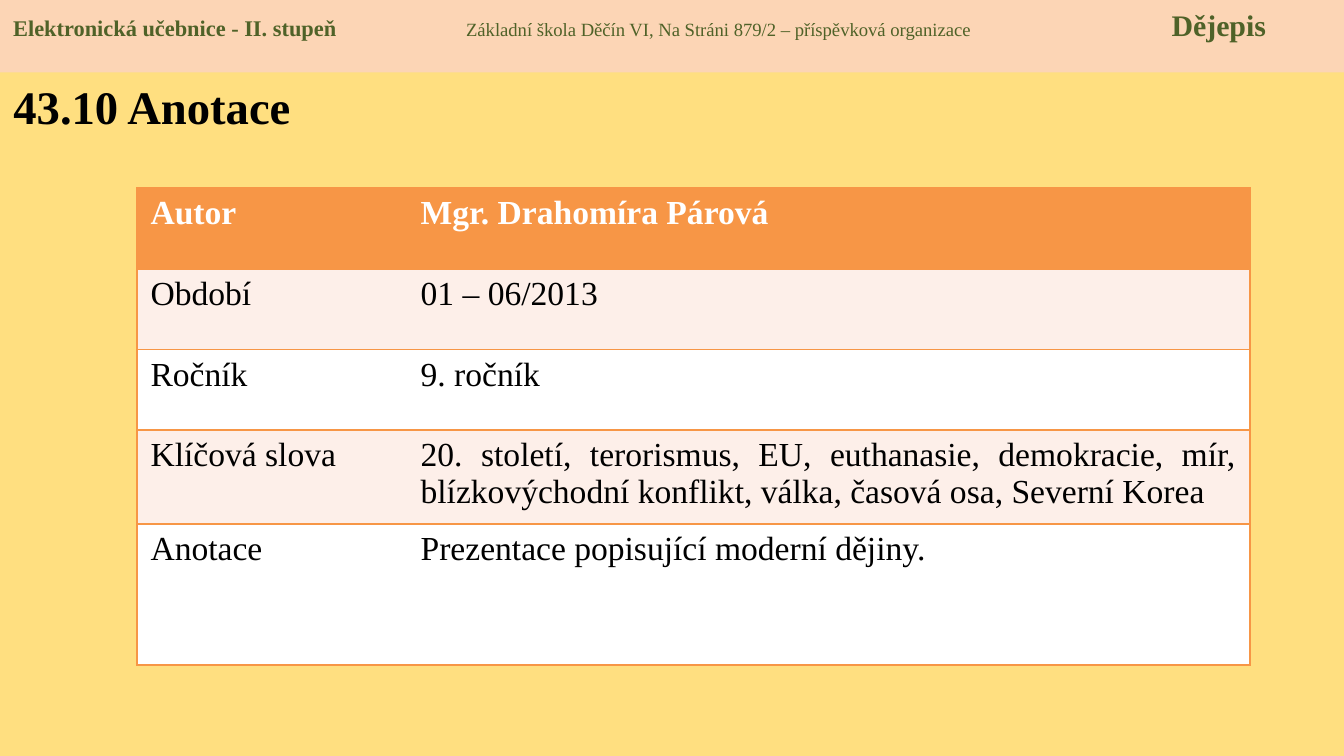
"""Build the annotation slide with a header band, a title and a fact table."""
from dataclasses import dataclass
from typing import Any

from lxml import etree
from pptx import Presentation
from pptx.dml.color import RGBColor
from pptx.enum.shapes import MSO_SHAPE
from pptx.enum.text import MSO_ANCHOR, MSO_AUTO_SIZE, PP_ALIGN
from pptx.oxml.ns import qn
from pptx.util import Inches, Pt

RECT = MSO_SHAPE.RECTANGLE
TOP = MSO_ANCHOR.TOP
LEFT, JUSTIFY = PP_ALIGN.LEFT, PP_ALIGN.JUSTIFY
NO_FIT = MSO_AUTO_SIZE.NONE
WIDTH = 10
HEIGHT = WIDTH * 9 / 16


@dataclass(frozen=True)
class Theme:
    face: str = "Times New Roman"
    page: str = "FFDF80"
    band: str = "FCD5B5"
    green: str = "4F6228"
    orange: str = "F79646"
    pale: str = "FDEFE9"
    white: str = "FFFFFF"
    black: str = "000000"
    small: int = 10
    label: int = 12
    topic: int = 16
    body: int = 18
    title: int = 25


@dataclass(frozen=True)
class Part:
    text: str
    size: int
    bold: bool


@dataclass(frozen=True)
class Row:
    label: str
    value: str
    height: float


THEME = Theme()
PARTS = [
    Part("Elektronická učebnice - II. stupeň", THEME.label, True),
    Part("\tZákladní škola Děčín VI, Na Stráni 879/2 – příspěvková organizace",
         THEME.small, False),
    Part("\tDějepis", THEME.topic, True),
]
STOPS = [3.37, 8.62]
ROWS = [
    Row("Autor", "Mgr. Drahomíra Párová", 0.6),
    Row("Období", "01 – 06/2013", 0.6),
    Row("Ročník", "9. ročník", 0.6),
    Row("Klíčová slova", "20. století, terorismus, EU, euthanasie, demokracie, mír, "
        "blízkovýchodní konflikt, válka, časová osa, Severní Korea", 0.7),
    Row("Anotace", "Prezentace popisující moderní dějiny.", 1.05),
]
COLS = [2.01, 6.27]


def apply(target: Any, values: dict[str, Any]) -> None:
    """Set each attribute named in values on the target."""
    for name, value in values.items():
        setattr(target, name, value)


def write(para: Any, part: Part, color: str) -> None:
    """Add a styled run to the paragraph."""
    run = para.add_run()
    run.text = part.text
    apply(run.font, {"name": THEME.face, "size": Pt(part.size), "bold": part.bold})
    run.font.color.rgb = RGBColor.from_string(color)


def paint(fill: Any, color: str) -> None:
    """Give the fill one solid colour."""
    fill.solid()
    fill.fore_color.rgb = RGBColor.from_string(color)


def add_tabs(para: Any, stops: list[float]) -> None:
    """Add left tab stops to the paragraph."""
    tabs = etree.SubElement(para._p.get_or_add_pPr(), qn("a:tabLst"))
    for stop in stops:
        etree.SubElement(tabs, qn("a:tab"), pos=str(Inches(stop)), algn="l")


def add_edges(cell: Any, bare: str) -> None:
    """Line every side of the cell but the bare one."""
    props = cell._tc.get_or_add_tcPr()
    for side in ("lnL", "lnR", "lnT", "lnB"):
        line = etree.SubElement(props, qn(f"a:{side}"), w=str(Pt(1)))
        if side == bare:
            etree.SubElement(line, qn("a:noFill"))
        else:
            solid = etree.SubElement(line, qn("a:solidFill"))
            etree.SubElement(solid, qn("a:srgbClr"), val=THEME.orange)


def draw_band(slide: Any) -> None:
    """Draw the header band with its three texts."""
    band = slide.shapes.add_shape(RECT, 0, 0, Inches(WIDTH), Inches(0.54))
    band.shadow.inherit = False
    paint(band.fill, THEME.band)
    band.line.fill.background()
    apply(band.text_frame, {"word_wrap": True, "vertical_anchor": TOP})
    para = band.text_frame.paragraphs[0]
    para.alignment = LEFT
    add_tabs(para, STOPS)
    for part in PARTS:
        write(para, part, THEME.green)


def draw_title(slide: Any) -> None:
    """Place and fill the title."""
    title = slide.shapes.title
    apply(title, {"left": 0, "top": Inches(0.53),
                  "width": Inches(3.74), "height": Inches(0.65)})
    apply(title.text_frame, {"word_wrap": True, "vertical_anchor": TOP,
                             "auto_size": NO_FIT})
    para = title.text_frame.paragraphs[0]
    para.alignment = LEFT
    write(para, Part("43.10 Anotace", THEME.title, True), THEME.black)


def draw_table(slide: Any) -> None:
    """Draw the fact table with banded rows."""
    total = sum(row.height for row in ROWS)
    table = slide.shapes.add_table(
        len(ROWS), len(COLS), Inches(1.02), Inches(1.4),
        Inches(sum(COLS)), Inches(total)).table
    for col, width in zip(table.columns, COLS):
        col.width = Inches(width)
    for i, row in enumerate(ROWS):
        table.rows[i].height = Inches(row.height)
        head = i == 0
        fill = THEME.orange if head else THEME.pale if i % 2 else THEME.white
        color = THEME.white if head else THEME.black
        for j, (text, bare) in enumerate([(row.label, "lnR"), (row.value, "lnL")]):
            cell = table.cell(i, j)
            add_edges(cell, bare)
            paint(cell.fill, fill)
            para = cell.text_frame.paragraphs[0]
            para.alignment = JUSTIFY
            write(para, Part(text, THEME.body, head), color)


def main() -> None:
    """Build and save the deck."""
    deck = Presentation()
    apply(deck, {"slide_width": Inches(WIDTH), "slide_height": Inches(HEIGHT)})
    slide = deck.slides.add_slide(deck.slide_layouts[5])
    paint(slide.background.fill, THEME.page)
    draw_band(slide)
    draw_table(slide)
    draw_title(slide)
    deck.save("out.pptx")


if __name__ == "__main__":
    main()
